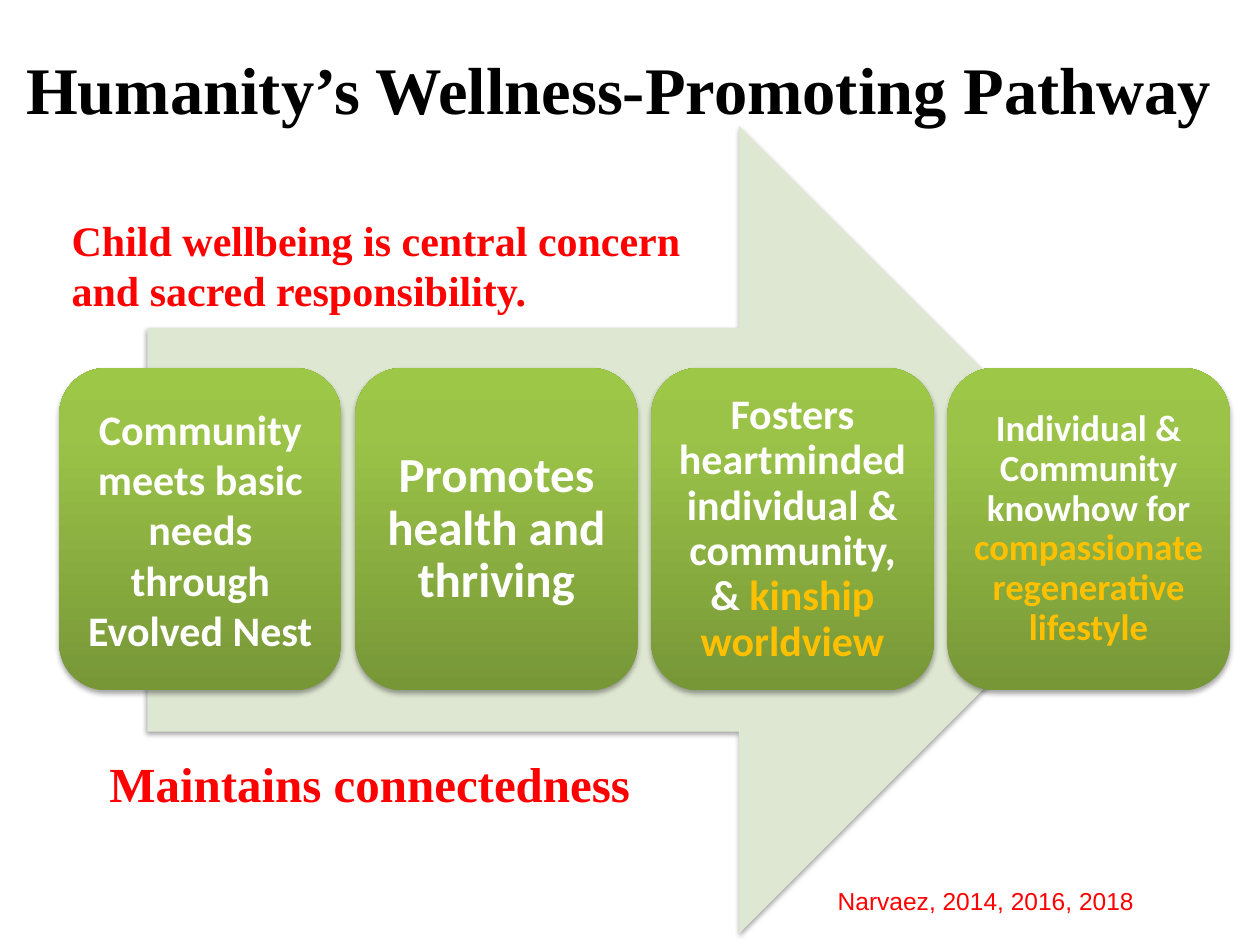
"""Build the slide on humanity's wellness-promoting pathway."""
from copy import deepcopy

from pptx import Presentation
from pptx.dml.color import RGBColor
from pptx.enum.shapes import MSO_SHAPE
from pptx.enum.text import MSO_ANCHOR, PP_ALIGN
from pptx.oxml import parse_xml
from pptx.oxml.ns import nsdecls, qn
from pptx.util import Inches, Pt

ARROW, CARD = MSO_SHAPE.RIGHT_ARROW, MSO_SHAPE.ROUNDED_RECTANGLE
MIDDLE, TOP = MSO_ANCHOR.MIDDLE, MSO_ANCHOR.TOP
CENTER = PP_ALIGN.CENTER

BLACK = RGBColor(0x00, 0x00, 0x00)
WHITE = RGBColor(0xFF, 0xFF, 0xFF)
RED = RGBColor(0xFF, 0x00, 0x00)
GOLD = RGBColor(0xFF, 0xC0, 0x00)
PALE_GREEN = RGBColor(0xDE, 0xE7, 0xD1)
CARD_STOPS = [
    (0, RGBColor(0x77, 0x97, 0x37)),
    (0.8, RGBColor(0x9B, 0xC3, 0x48)),
    (1, RGBColor(0x9D, 0xC7, 0x46)),
]

SERIF, SANS, CARD_FONT = "Times New Roman", "Arial", "Calibri"
CARD_LEFT, CARD_TOP, CARD_WIDTH, CARD_HEIGHT, CARD_STEP = 0.47, 2.92, 2.24, 2.56, 2.35

CARDS = [
    ("Community meets basic needs through Evolved Nest", "", 24, 1.0, 0.1),
    ("Promotes health and thriving", "", 28, 0.9, 0.12),
    ("Fosters heartminded individual & community, & ", "kinship worldview", 24, 0.9, 0.1),
    ("Individual & Community knowhow for ", "compassionate regenerative lifestyle", 21, 0.9, 0.09),
]

SHADOW = (
    f'<a:outerShdw {nsdecls("a")} blurRad="39370" dist="22860" dir="5400000" rotWithShape="0">'
    '<a:srgbClr val="000000"><a:alpha val="35000"/></a:srgbClr></a:outerShdw>'
)


def add_run(p, text, size, font, color, bold=True):
    """Append a formatted run to a paragraph."""
    r = p.add_run()
    r.text = text
    r.font.size = Pt(size)
    r.font.name = font
    r.font.bold = bold
    r.font.color.rgb = color


def add_label(s, box, text, size, font, color, bold=True, anchor=TOP):
    """Add a wrapped, left-aligned text box."""
    tf = s.shapes.add_textbox(*map(Inches, box)).text_frame
    tf.word_wrap = True
    tf.vertical_anchor = anchor
    add_run(tf.paragraphs[0], text, size, font, color, bold)


def add_shadowed_shape(s, kind, *box):
    """Add a borderless preset shape with a soft shadow below it."""
    sp = s.shapes.add_shape(kind, *map(Inches, box))
    sp.line.fill.background()
    sp.shadow.inherit = False
    sp._element.spPr.find(qn("a:effectLst")).append(parse_xml(SHADOW))
    return sp


def fill_gradient(sp):
    """Fill a shape with the green gradient, dark at the bottom."""
    sp.fill.gradient()
    sp.fill.gradient_angle = 90
    stop_list = sp._element.spPr.find(".//" + qn("a:gsLst"))
    stop_list.insert(1, deepcopy(stop_list[0]))
    for stop, (position, color) in zip(sp.fill.gradient_stops, CARD_STOPS):
        stop.position = position
        stop.color.rgb = color


def add_card(s, index, text, highlight, size, spacing, inset):
    """Add one step of the pathway, its closing words in gold."""
    left = CARD_LEFT + index * CARD_STEP
    sp = add_shadowed_shape(s, CARD, left, CARD_TOP, CARD_WIDTH, CARD_HEIGHT)
    fill_gradient(sp)
    tf = sp.text_frame
    tf.word_wrap = True
    tf.vertical_anchor = MIDDLE
    tf.margin_left = tf.margin_right = tf.margin_top = tf.margin_bottom = Inches(inset)
    p = tf.paragraphs[0]
    p.alignment = CENTER
    p.line_spacing = spacing
    add_run(p, text, size, CARD_FONT, WHITE)
    if highlight:
        add_run(p, highlight, size, CARD_FONT, GOLD)


def main():
    """Build and save the slide."""
    prs = Presentation()
    prs.slide_width, prs.slide_height = Inches(10), Inches(7.5)
    s = prs.slides.add_slide(prs.slide_layouts[6])

    add_label(s, (0.11, 0.15, 10, 1.1), "Humanity’s Wellness-Promoting Pathway",
              38, SERIF, BLACK, anchor=MIDDLE)
    arrow = add_shadowed_shape(s, ARROW, 1.17, 1, 7.9, 6.41)
    arrow.fill.solid()
    arrow.fill.fore_color.rgb = PALE_GREEN
    for index, card in enumerate(CARDS):
        add_card(s, index, *card)
    add_label(s, (6.55, 6.98, 2.73, 0.34), "Narvaez, 2014, 2016, 2018", 14, SANS, RED, bold=False)
    add_label(s, (0.77, 5.93, 4.5, 0.57), "Maintains connectedness", 28, SERIF, RED)
    add_label(s, (0.47, 1.65, 5.21, 0.91),
              "Child wellbeing is central concern and sacred responsibility.", 24, SERIF, RED)

    prs.save("out.pptx")


if __name__ == "__main__":
    main()
